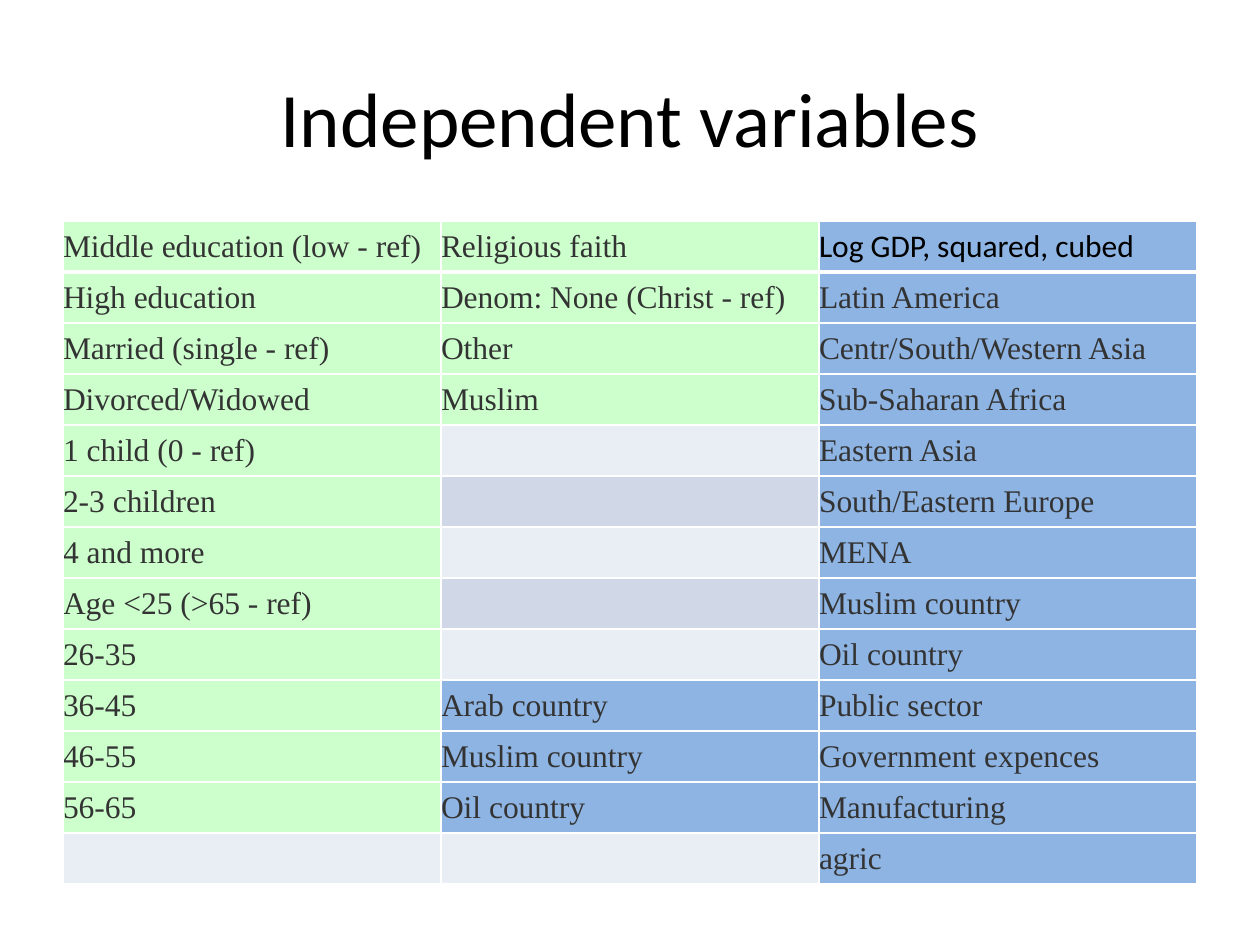
from dataclasses import dataclass

from lxml.etree import SubElement
from pptx import Presentation
from pptx.dml.color import RGBColor
from pptx.enum.text import MSO_ANCHOR, PP_ALIGN
from pptx.oxml.ns import qn
from pptx.util import Emu, Pt

EMU_PER_PX = 914400 / 126


@dataclass(frozen=True)
class Theme:
    heading_font: str = "Calibri"
    body_font: str = "Times New Roman"
    title_size: int = 44
    body_size: int = 18
    black: str = "000000"
    gray: str = "333333"
    border: str = "FFFFFF"
    individual: str = "CCFFCC"
    country: str = "8EB4E3"
    bands: tuple = ("E9EDF4", "D0D8E8")


THEME = Theme()

INDIVIDUAL = [
    "Middle education (low - ref)", "High education", "Married (single - ref)",
    "Divorced/Widowed", "1 child (0 - ref)", "2-3 children", "4 and more",
    "Age <25 (>65 - ref)", "26-35", "36-45", "46-55", "56-65", "",
]
RELIGION = ["Religious faith", "Denom: None (Christ - ref)", "Other", "Muslim"]
INTERACTIONS = ["Arab country", "Muslim country", "Oil country"]
COUNTRY = [
    "Log GDP, squared, cubed", "Latin America", "Centr/South/Western Asia",
    "Sub-Saharan Africa", "Eastern Asia", "South/Eastern Europe", "MENA",
    "Muslim country", "Oil country", "Public sector", "Government expences",
    "Manufacturing", "agric",
]
MIDDLE = RELIGION + [""] * 5 + INTERACTIONS + [""]
ROWS = list(zip(INDIVIDUAL, MIDDLE, COUNTRY))


def px(length):
    return Emu(round(length * EMU_PER_PX))


def set_format(target, values):
    for name, value in values.items():
        setattr(target, name, value)


def style_font(font, name, size, color):
    set_format(font, {"name": name, "size": Pt(size), "bold": False})
    font.color.rgb = RGBColor.from_string(color)


def add_title(page, box, text):
    title = page.shapes.title
    set_format(title, dict(zip(("left", "top", "width", "height"), map(px, box))))
    frame = title.text_frame
    set_format(frame, {"word_wrap": True, "vertical_anchor": MSO_ANCHOR.MIDDLE})
    para = frame.paragraphs[0]
    para.alignment = PP_ALIGN.CENTER
    span = para.add_run()
    span.text = text
    style_font(span.font, THEME.heading_font, THEME.title_size, THEME.black)


def set_borders(cell, widths):
    """Draw the cell's edges; widths maps L, R, T, B to points, in that order."""
    properties = cell._tc.get_or_add_tcPr()
    for side, width in widths.items():
        line = SubElement(properties, qn(f"a:ln{side}"), w=str(Pt(width)))
        fill = SubElement(line, qn("a:solidFill"))
        SubElement(fill, qn("a:srgbClr"), val=THEME.border)


def cell_color(row, column, text):
    if not text:
        return THEME.bands[row % 2]
    if column == 2 or text in INTERACTIONS:
        return THEME.country
    return THEME.individual


def fill_cell(cell, row, column, text):
    set_format(cell, {
        "margin_left": 0, "margin_right": 0, "margin_top": 0, "margin_bottom": 0,
        "vertical_anchor": MSO_ANCHOR.MIDDLE,
    })
    set_borders(cell, {"L": 1, "R": 1, "T": 3 if row == 1 else 1, "B": 3 if row == 0 else 1})
    cell.fill.solid()
    cell.fill.fore_color.rgb = RGBColor.from_string(cell_color(row, column, text))
    para = cell.text_frame.paragraphs[0]
    if not text:
        para.font.size = Pt(THEME.body_size)
        return
    span = para.add_run()
    span.text = text
    is_gdp = (row, column) == (0, 2)
    style_font(
        span.font,
        THEME.heading_font if is_gdp else THEME.body_font,
        THEME.body_size,
        THEME.black if is_gdp else THEME.gray,
    )


def add_variables_table(page, box, rows):
    left, top, width, height = box
    columns = len(rows[0])
    frame = page.shapes.add_table(len(rows), columns, *map(px, box))
    table = frame.table
    set_format(table, {"first_row": False, "horz_banding": False})
    for column in table.columns:
        column.width = px(width / columns)
    for row, texts in enumerate(rows):
        table.rows[row].height = px(height / len(rows))
        for column, text in enumerate(texts):
            fill_cell(table.cell(row, column), row, column, text)


def main():
    deck = Presentation()
    set_format(deck, {"slide_width": px(1260), "slide_height": px(945)})
    page = deck.slides.add_slide(deck.slide_layouts[5])
    add_title(page, (63, 38, 1134, 158), "Independent variables")
    add_variables_table(page, (63, 221, 1134, 663), ROWS)
    deck.save("out.pptx")


if __name__ == "__main__":
    main()
